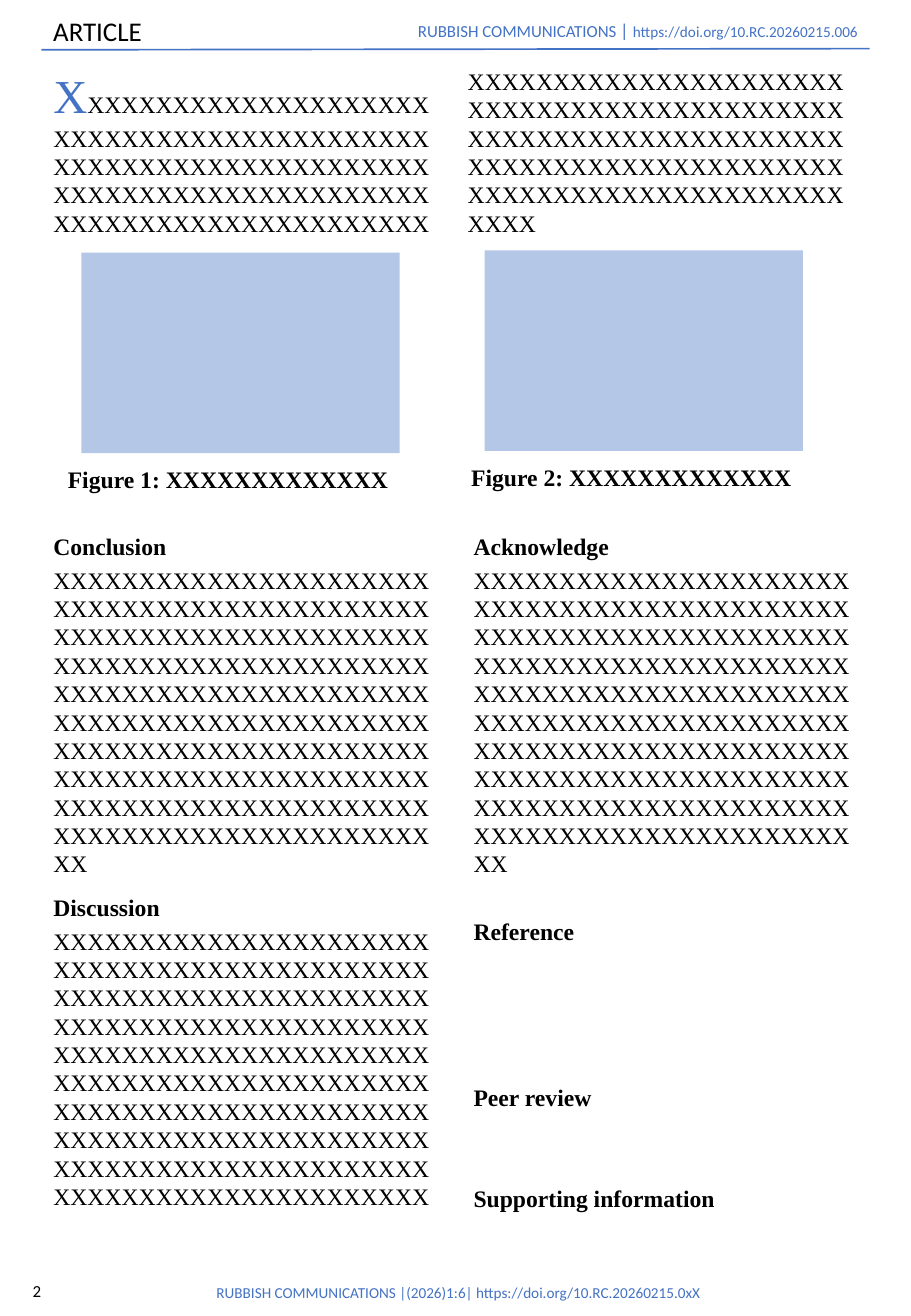
from dataclasses import dataclass

from lxml.etree import SubElement
from pptx import Presentation
from pptx.dml.color import RGBColor
from pptx.enum.shapes import MSO_CONNECTOR, MSO_SHAPE
from pptx.enum.text import MSO_AUTO_SIZE, PP_ALIGN
from pptx.oxml.ns import qn
from pptx.util import Emu, Pt

SCALE = 9144
LEFT, RIGHT, COLUMN = 34, 380, 341


@dataclass(frozen=True)
class Theme:
    """Colours, fonts and type sizes of the journal page."""
    blue: str = "4472C4"
    pale: str = "B4C7E7"
    black: str = "000000"
    sans: str = "Calibri"
    serif: str = "Times New Roman"
    title: int = 16
    initial: int = 28
    body: int = 14
    bar: int = 11
    small: int = 10
    link: int = 9


T = Theme()
BODY = {"alignment": PP_ALIGN.JUSTIFY, "space_after": Pt(3)}


def px(*lengths):
    """Turn px lengths into EMU."""
    return [Emu(n * SCALE) for n in lengths]


def add_text(parent, box, paragraphs, wrap=True):
    """Add a text box; each paragraph is a (format, runs) pair."""
    tf = parent.shapes.add_textbox(*px(*box)).text_frame
    tf.word_wrap = wrap
    tf.auto_size = MSO_AUTO_SIZE.SHAPE_TO_FIT_TEXT
    for i, (layout, runs) in enumerate(paragraphs):
        p = tf.add_paragraph() if i else tf.paragraphs[0]
        for name, value in layout.items():
            setattr(p, name, value)
        for text, size, face, colour, bold in runs:
            r = p.add_run()
            r.text = text
            for name, value in {"size": Pt(size), "name": face, "bold": bold}.items():
                setattr(r.font, name, value)
            r.font.color.rgb = RGBColor.from_string(colour)
    return tf


def sans(text, size, colour=T.blue):
    """Describe a sans-serif run."""
    return text, size, T.sans, colour, False


def serif(text, bold=False, size=T.body, colour=T.black):
    """Describe a serif run."""
    return text, size, T.serif, colour, bold


def add_header(s, box):
    """Place the article label, journal line and rule."""
    x, y, w, h = box
    rule = s.shapes.add_connector(MSO_CONNECTOR.STRAIGHT, *px(x, y + h, x + w, y + h - 1))
    rule.line.color.rgb = RGBColor.from_string(T.blue)
    rule.line.width = Pt(1)
    SubElement(rule._element.spPr, qn("a:effectLst"))
    add_text(s, (x, y, 96, 37), [({}, [sans("ARTICLE", T.title, T.black)])], wrap=False)
    journal = [sans("RUBBISH COMMUNICATIONS ", T.small), sans("| ", T.bar),
               sans("https://doi.org/10.RC.20260215.006", T.link)]
    add_text(s, (x + w - 387, y + 4, 387, 29),
             [({"alignment": PP_ALIGN.RIGHT}, journal)], wrap=False)


def add_opening(s, box):
    """Place the two-column opening text with its large initial."""
    runs = [serif("X", size=T.initial, colour=T.blue), serif("X" * 222)]
    columns = add_text(s, box, [(BODY, runs)])._txBody.bodyPr
    columns.set("numCol", "2")
    columns.set("spcCol", str(20 * SCALE))


def add_figure(s, box, number):
    """Group a figure panel with its caption."""
    x, y, w, h = box
    group = s.shapes.add_group_shape()
    panel = group.shapes.add_shape(MSO_SHAPE.RECTANGLE, *px(x + 21, y, 262, 165))
    panel.shadow.inherit = False
    panel.fill.solid()
    panel.fill.fore_color.rgb = RGBColor.from_string(T.pale)
    panel.line.fill.background()
    caption = serif(f"Figure {number}: XXXXXXXXXXXXX", bold=True)
    add_text(group, (x, y + h - 34, w, 34), [({}, [caption])], wrap=False)


def add_sections(s, box, sections):
    """Stack (heading, body length, gap before) sections in one column."""
    paragraphs = []
    for heading, length, gap in sections:
        layout = {**BODY, "space_before": Pt(gap)} if gap else BODY
        paragraphs.append((layout, [serif(heading, bold=True)]))
        if length:
            paragraphs.append((BODY, [serif("X" * length)]))
    add_text(s, box, paragraphs)


def add_footer(s, box):
    """Place the page number and citation line."""
    x, y, w, h = box
    add_text(s, (x, y, 27, h), [({}, [sans("2", T.small, T.black)])], wrap=False)
    citation = sans("RUBBISH COMMUNICATIONS |(2026)1:6| https://doi.org/10.RC.20260215.0xX", T.link)
    add_text(s, (x + w - 422, y + 2, 422, 25),
             [({"alignment": PP_ALIGN.RIGHT}, [citation])], wrap=False)


def main():
    """Build and save the article page."""
    prs = Presentation()
    prs.slide_width, prs.slide_height = px(750, 1083)
    s = prs.slides.add_slide(prs.slide_layouts[6])
    add_header(s, (LEFT, 7, 682, 34))
    add_opening(s, (LEFT, 50, 682, 153))
    add_figure(s, (46, 208, 291, 204), 1)
    add_figure(s, (378, 206, 291, 204), 2)
    add_sections(s, (LEFT, 433, COLUMN, 297), [("Conclusion", 222, 0)])
    add_sections(s, (LEFT, 730, COLUMN, 273), [("Discussion", 220, 0)])
    add_sections(s, (RIGHT, 433, COLUMN, 630), [
        ("Acknowledge", 222, 0), ("Reference", 0, 20),
        ("Peer review", 0, 79), ("Supporting information", 0, 40)])
    add_footer(s, (17, 1049, 569, 27))
    prs.save("out.pptx")


if __name__ == "__main__":
    main()
